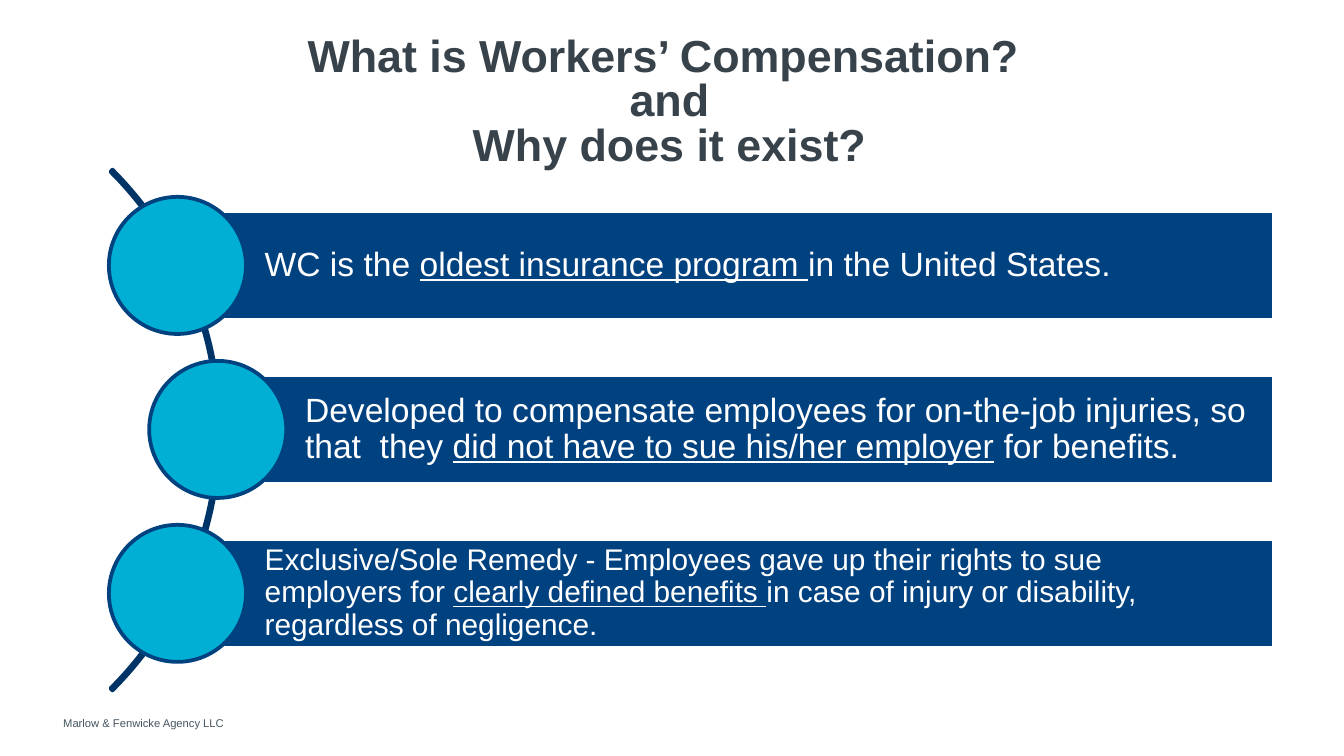
from pptx import Presentation
from pptx.dml.color import RGBColor
from pptx.enum.shapes import MSO_SHAPE
from pptx.enum.text import MSO_ANCHOR, MSO_AUTO_SIZE, PP_ALIGN
from pptx.util import Inches, Pt

COLORS = {"title": "37424A", "footer": "455560", "bar": "004180",
          "dot": "00AFD3", "arc": "003467", "white": "FFFFFF"}
CELL = 0.1


def color(name):
    return RGBColor.from_string(COLORS[name])


def cells(*counts):
    return [Inches(n * CELL) for n in counts]


class SlideBuilder:
    font = "Arial"
    line_width = Pt(2)

    def __init__(self, prs):
        self.s = prs.slides.add_slide(prs.slide_layouts[5])

    def style(self, p, size, name, bold=False):
        p.font.name = self.font
        p.font.size = Pt(size)
        p.font.bold = bold
        p.font.color.rgb = color(name)

    def frame(self, tf, anchor, wrap, insets):
        tf.auto_size = MSO_AUTO_SIZE.NONE
        tf.vertical_anchor = anchor
        tf.word_wrap = wrap
        tf.margin_left, tf.margin_top, tf.margin_right, tf.margin_bottom = cells(*insets)

    def title(self, text, *box):
        sp = self.s.shapes.title
        sp.left, sp.top, sp.width, sp.height = cells(*box)
        tf = sp.text_frame
        self.frame(tf, MSO_ANCHOR.TOP, False, (0, 0, 0, 0))
        p = tf.paragraphs[0]
        p.text = text
        p.alignment = PP_ALIGN.CENTER
        p.line_spacing = 0.83
        self.style(p, 24, "title", bold=True)

    def footer(self, text, *box):
        tf = self.s.shapes.add_textbox(*cells(*box)).text_frame
        self.frame(tf, MSO_ANCHOR.BOTTOM, False, (0, 0, 0, 0))
        p = tf.paragraphs[0]
        p.text = text
        self.style(p, 6, "footer")

    def shape(self, kind, box, line, fill=None):
        sp = self.s.shapes.add_shape(kind, *cells(*box))
        sp.shadow.inherit = False
        if fill:
            sp.fill.solid()
            sp.fill.fore_color.rgb = color(fill)
        else:
            sp.fill.background()
        sp.line.color.rgb = color(line)
        sp.line.width = self.line_width
        return sp

    def arc(self, *box):
        sp = self.shape(MSO_SHAPE.BLOCK_ARC, box, "arc")
        for i, value in enumerate((189, 27, 0.004)):
            sp.adjustments[i] = value

    def bar(self, parts, size, *box):
        tf = self.shape(MSO_SHAPE.RECTANGLE, box, "white", "bar").text_frame
        self.frame(tf, MSO_ANCHOR.MIDDLE, True, (6.5, 0.5, 0.5, 0.5))
        p = tf.paragraphs[0]
        p.alignment = PP_ALIGN.LEFT
        p.line_spacing = 0.9
        for i, part in enumerate(parts):
            for j, line in enumerate(part.split("\n")):
                if j:
                    p.add_line_break()
                r = p.add_run()
                r.text = line
                if i == 1:
                    r.font.underline = True
        self.style(p, size, "white")

    def dot(self, *box):
        self.shape(MSO_SHAPE.OVAL, box, "bar", "dot")


BARS = [
    (13.2, 18, ("WC is the ", "oldest insurance program ", "in the United States.")),
    (16.2, 18, ("Developed to compensate employees for on-the-job injuries, so that  they ",
                "did not have to sue his/her employer", " for benefits.")),
    (13.2, 16, ("Exclusive/Sole Remedy - Employees gave up their rights to sue\nemployers for ",
                "clearly defined benefits ",
                "in case of injury or disability, regardless of negligence.")),
]
RIGHT, TOP, PITCH, HEIGHT, DOT = 94.8, 15.7, 12.2, 8.1, 10.2


def main():
    prs = Presentation()
    prs.slide_width, prs.slide_height = cells(100, 56.25)
    b = SlideBuilder(prs)
    b.footer("Marlow & Fenwicke Agency LLC", 4.7, 53.5, 30.1, 0.8)
    b.title("What is Workers’ Compensation? \vand\vWhy does it exist?", 14.2, 2.7, 71.2, 9)
    b.arc(-38.4, 4.6, 54.8, 54.8)
    for i, (left, size, parts) in enumerate(BARS):
        top = TOP + i * PITCH
        b.bar(parts, size, left, top, RIGHT - left, HEIGHT)
        b.dot(left - DOT / 2, top + (HEIGHT - DOT) / 2, DOT, DOT)
    prs.save("out.pptx")


if __name__ == "__main__":
    main()
